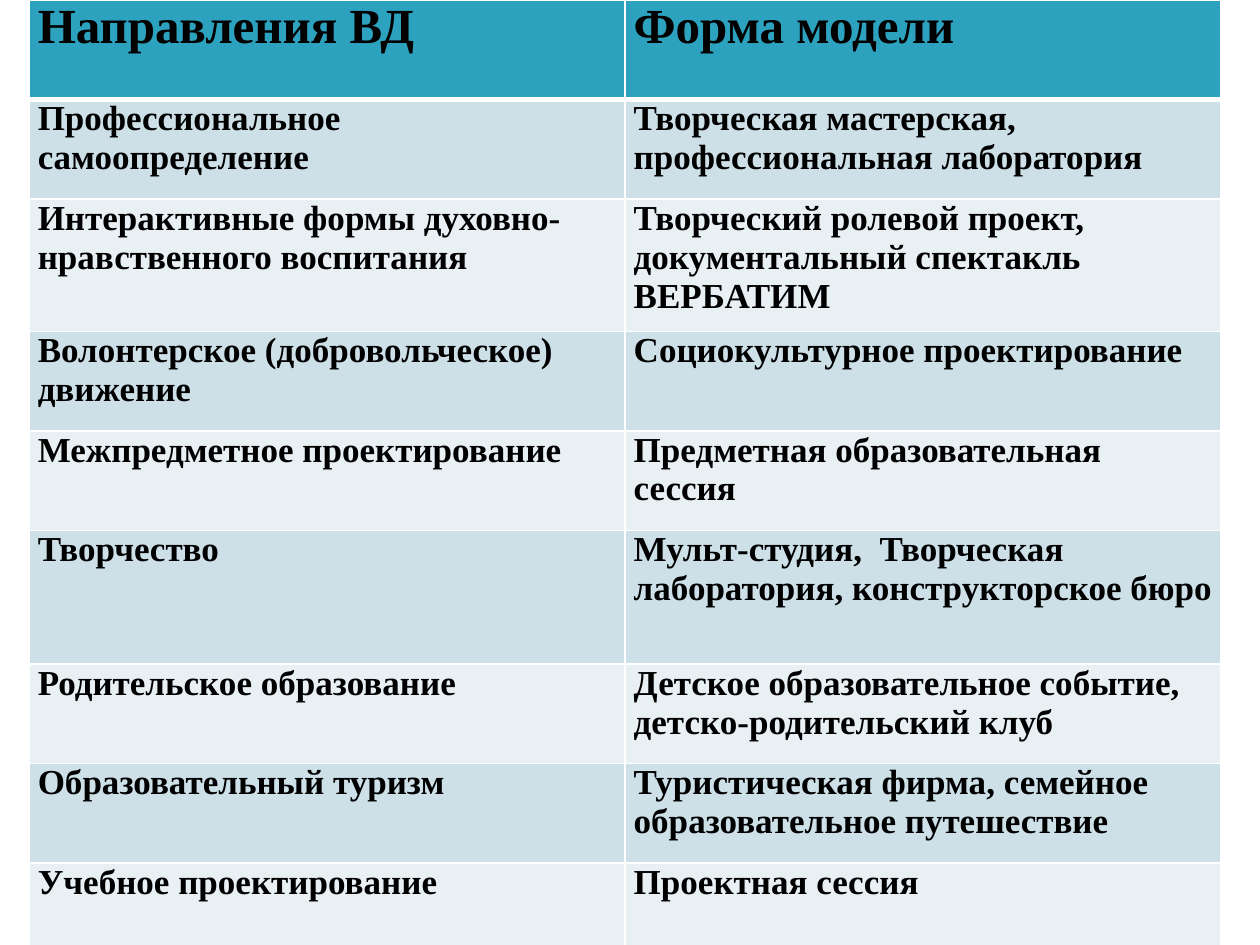
"""Build a slide with a table of activity directions and their model forms."""
from lxml.etree import SubElement
from pptx import Presentation
from pptx.dml.color import RGBColor
from pptx.oxml.ns import qn
from pptx.util import Inches, Pt

COLORS = {
    "header": "2DA2BF",
    "odd": "CDE0E8",
    "even": "E8F0F4",
    "border": "FFFFFF",
    "text": "000000",
}
ROWS = [
    ("Направления ВД", "Форма модели"),
    ("Профессиональное самоопределение",
     "Творческая мастерская, профессиональная лаборатория"),
    ("Интерактивные формы духовно-нравственного воспитания",
     "Творческий ролевой проект, документальный спектакль ВЕРБАТИМ"),
    ("Волонтерское (добровольческое) движение", "Социокультурное проектирование"),
    ("Межпредметное проектирование", "Предметная образовательная сессия"),
    ("Творчество", "Мульт-студия,  Творческая лаборатория, конструкторское бюро"),
    ("Родительское образование",
     "Детское образовательное событие, детско-родительский клуб"),
    ("Образовательный туризм",
     "Туристическая фирма, семейное образовательное путешествие"),
    ("Учебное проектирование", "Проектная сессия"),
]
ROW_HEIGHT = 0.79
TALL_ROWS = {2: 1.05, 5: 1.06}
COLUMN_WIDTH = 4.73


def add_border(cell, side, width):
    line = SubElement(cell._tc.get_or_add_tcPr(), qn(f"a:{side}"), w=str(Pt(width)))
    fill = SubElement(line, qn("a:solidFill"))
    SubElement(fill, qn("a:srgbClr"), val=COLORS["border"])


presentation = Presentation()
presentation.slide_width = Inches(10)
presentation.slide_height = Inches(7.5)
slide = presentation.slides.add_slide(presentation.slide_layouts[6])

heights = [TALL_ROWS.get(index, ROW_HEIGHT) for index in range(len(ROWS))]
table = slide.shapes.add_table(
    len(ROWS), 2, Inches(0.23), Inches(0), Inches(2 * COLUMN_WIDTH), Inches(sum(heights))
).table
for column in table.columns:
    column.width = Inches(COLUMN_WIDTH)

for row_index, texts in enumerate(ROWS):
    table.rows[row_index].height = Inches(heights[row_index])
    is_header = row_index == 0
    band = "header" if is_header else "odd" if row_index % 2 else "even"
    for column_index, text in enumerate(texts):
        cell = table.cell(row_index, column_index)
        cell.margin_left = cell.margin_right = Inches(0.07)
        cell.margin_top = cell.margin_bottom = Inches(0)
        for side in ("lnL", "lnR", "lnT", "lnB"):
            thick = (row_index, side) in ((0, "lnB"), (1, "lnT"))
            add_border(cell, side, 3 if thick else 1)
        cell.fill.solid()
        cell.fill.fore_color.rgb = RGBColor.from_string(COLORS[band])
        cell.text = text
        font = cell.text_frame.paragraphs[0].font
        font.name = "Times New Roman"
        font.size = Pt(28 if is_header else 20)
        font.bold = True
        font.color.rgb = RGBColor.from_string(COLORS["text"])

presentation.save("out.pptx")
